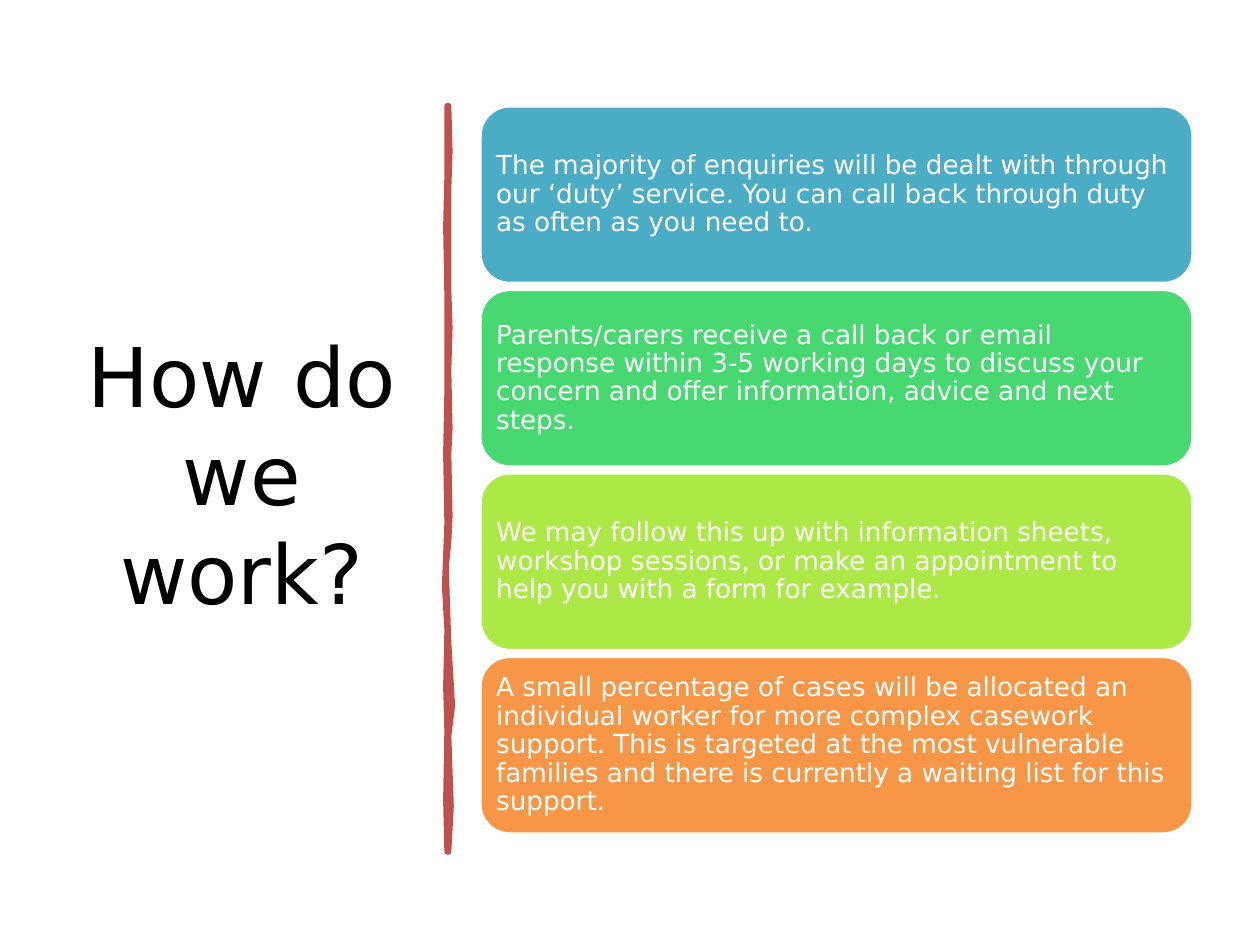
import pptx
import pptx.util
import pptx.dml.color
import pptx.enum.shapes
import pptx.enum.text
from pptx.util import Inches, Pt

COLORS = {
    "title": "000000", "divider": "C0504D", "white": "FFFFFF",
    "blue": "4BACC6", "green": "47D872", "lime": "ACE946", "orange": "F79646",
}
FONT = "DejaVu Sans"
ALIGN = pptx.enum.text.PP_ALIGN


def rgb(name):
    return pptx.dml.color.RGBColor.from_string(COLORS[name])


def write_text(shape, text, size, color, frame_format, paragraph_format):
    frame = shape.text_frame
    frame.text = text
    frame.word_wrap = True
    frame.vertical_anchor = pptx.enum.text.MSO_ANCHOR.MIDDLE
    for name, value in frame_format.items():
        setattr(frame, name, value)
    paragraph = frame.paragraphs[0]
    for name, value in paragraph_format.items():
        setattr(paragraph, name, value)
    font = paragraph.runs[0].font
    for name, value in {"name": FONT, "size": Pt(size)}.items():
        setattr(font, name, value)
    font.color.rgb = rgb(color)


presentation = pptx.Presentation()
presentation.slide_width = Inches(10)
presentation.slide_height = Inches(7.5)
slide = presentation.slides.add_slide(presentation.slide_layouts[5])

# Title on the left
title = slide.shapes.title
for name, value in {"left": 0.52, "top": 0.7, "width": 2.8, "height": 6.11}.items():
    setattr(title, name, Inches(value))
write_text(title, "How do we work?", 47, "title",
           {"auto_size": pptx.enum.text.MSO_AUTO_SIZE.NONE}, {"alignment": ALIGN.CENTER})

# Hand-drawn divider: down the right edge, up the left edge
right_edge = [
    (3.56, 0.84), (3.57, 1.2), (3.56, 1.5), (3.56, 2.3), (3.57, 2.6), (3.56, 2.94),
    (3.57, 3.4), (3.56, 3.6), (3.57, 4.1), (3.56, 4.3), (3.54, 4.5), (3.55, 4.8),
    (3.56, 5.1), (3.59, 5.6), (3.56, 5.84), (3.58, 6.4), (3.56, 6.76),
]
left_edge = [
    (3.55, 6.76), (3.54, 6.35), (3.55, 5.8), (3.54, 5.45), (3.55, 5.0), (3.53, 4.65),
    (3.54, 4.4), (3.55, 4.15), (3.54, 3.6), (3.55, 3.1), (3.55, 2.35), (3.54, 1.8),
    (3.55, 1.4), (3.55, 0.84),
]
points = [(Inches(x), Inches(y)) for x, y in right_edge + left_edge]
builder = slide.shapes.build_freeform(*points[0])
builder.add_line_segments(points[1:], close=True)
divider = builder.convert_to_shape()
divider.shadow.inherit = False
divider.fill.solid()
divider.fill.fore_color.rgb = rgb("divider")
divider.line.color.rgb = rgb("divider")
divider.line.width = Pt(3.25)

# Stack of four cards
cards = [
    ("blue", "The majority of enquiries will be dealt with through our ‘duty’ service. "
             "You can call back through duty as often as you need to."),
    ("green", "Parents/carers receive a call back or email response within 3-5 working days "
              "to discuss your concern and offer information, advice and next steps."),
    ("lime", "We may follow this up with information sheets, workshop sessions, "
             "or make an appointment to help you with a form for example."),
    ("orange", "A small percentage of cases will be allocated an individual worker for more "
               "complex casework support. This is targeted at the most vulnerable families "
               "and there is currently a waiting list for this support."),
]
first_top, last_top = 0.84, 5.21
pitch = (last_top - first_top) / (len(cards) - 1)
margins = {f"margin_{side}": Inches(0.06) for side in ("left", "right", "top", "bottom")}
for index, (color, text) in enumerate(cards):
    card = slide.shapes.add_shape(
        pptx.enum.shapes.MSO_SHAPE.ROUNDED_RECTANGLE,
        Inches(3.81), Inches(first_top + index * pitch), Inches(5.66), Inches(1.41))
    card.shadow.inherit = False
    card.fill.solid()
    card.fill.fore_color.rgb = rgb(color)
    card.line.color.rgb = rgb("white")
    card.line.width = Pt(2)
    write_text(card, text, 15, "white", margins,
               {"alignment": ALIGN.LEFT, "line_spacing": 0.9})

presentation.save("out.pptx")
